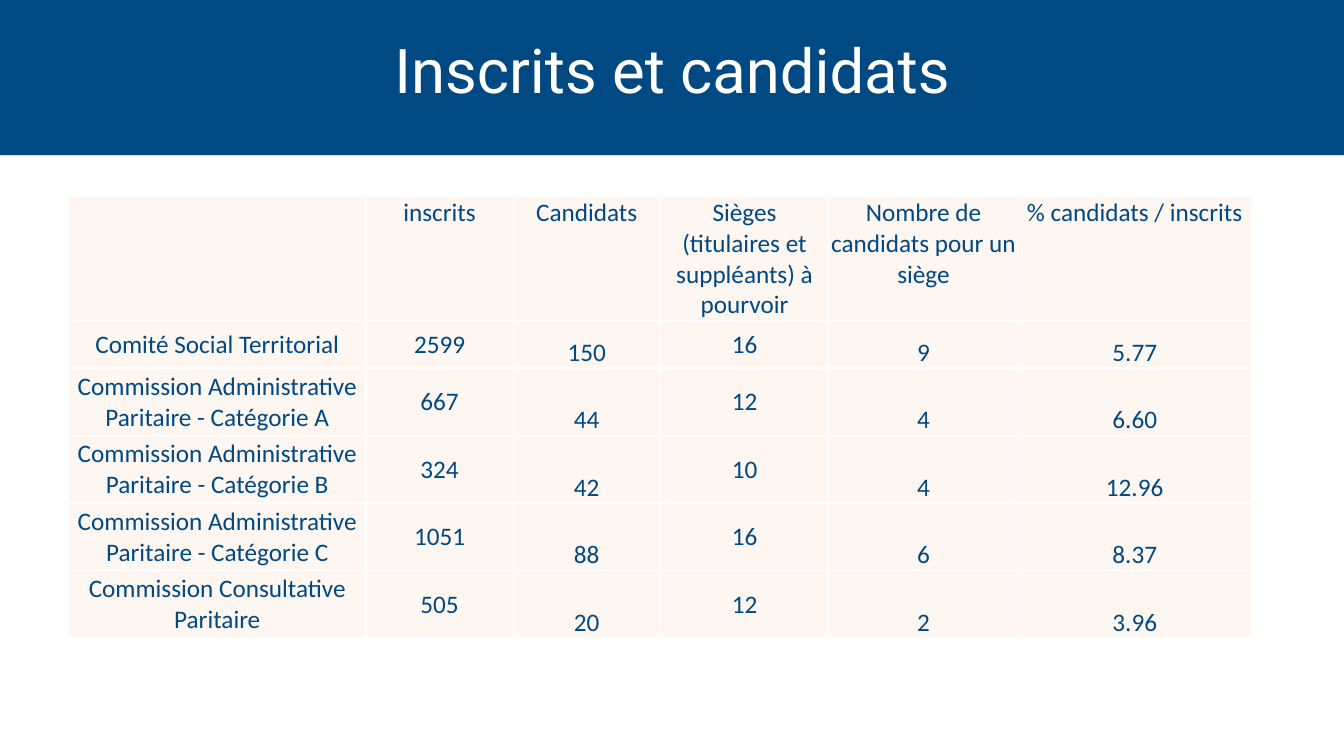
from lxml import etree
from pptx import Presentation
from pptx.dml.color import RGBColor
from pptx.enum.shapes import MSO_SHAPE
from pptx.enum.text import MSO_ANCHOR, PP_ALIGN
from pptx.oxml.ns import qn
from pptx.util import Inches, Pt

RECTANGLE = MSO_SHAPE.RECTANGLE
CENTER = PP_ALIGN.CENTER
TOP, MIDDLE, BOTTOM = MSO_ANCHOR.TOP, MSO_ANCHOR.MIDDLE, MSO_ANCHOR.BOTTOM
TITLE_ONLY = 5

BLUE, WHITE, CREAM = "004982", "FFFFFF", "FDF6F1"

COLUMN_WIDTHS = [2.95, 1.46, 1.46, 1.67, 1.88, 2.31]
ROW_HEIGHTS = [1.22, 0.47] + [0.67] * 4
COLUMN_ANCHORS = [MIDDLE, MIDDLE, BOTTOM, MIDDLE, BOTTOM, BOTTOM]
ELECTIONS = [
    ["", "inscrits", "Candidats", "Sièges (titulaires et suppléants) à pourvoir",
     "Nombre de candidats pour un siège", "% candidats / inscrits"],
    ["Comité Social Territorial", "2599", "150", "16", "9", "5.77"],
    ["Commission Administrative Paritaire - Catégorie A", "667", "44", "12", "4", "6.60"],
    ["Commission Administrative Paritaire - Catégorie B", "324", "42", "10", "4", "12.96"],
    ["Commission Administrative Paritaire - Catégorie C", "1051", "88", "16", "6", "8.37"],
    ["Commission Consultative Paritaire", "505", "20", "12", "2", "3.96"],
]


def rgb(value):
    return RGBColor.from_string(value)


def write(frame, text, font, size, color, align=CENTER, line_spacing=None):
    frame.word_wrap = True
    paragraph = frame.paragraphs[0]
    paragraph.alignment = align
    if line_spacing:
        paragraph.line_spacing = line_spacing
    paragraph.font.size = Pt(size)
    if text:
        run = paragraph.add_run()
        run.text = text
        run.font.name = font
        run.font.size = Pt(size)
        run.font.color.rgb = rgb(color)


def outline_cell(cell, color, width):
    """Draw the four borders, which must precede the fill in the cell properties."""
    properties = cell._tc.get_or_add_tcPr()
    for position, side in enumerate(("lnL", "lnR", "lnT", "lnB")):
        border = etree.Element(qn(f"a:{side}"), w=str(Pt(width)))
        fill = etree.SubElement(border, qn("a:solidFill"))
        etree.SubElement(fill, qn("a:srgbClr"), val=color)
        properties.insert(position, border)


class ResultsSlide:
    heading_font = "Roboto"
    table_font = "Calibri"

    def __init__(self, presentation):
        self.slide = presentation.slides.add_slide(presentation.slide_layouts[TITLE_ONLY])

    def title(self, text, left, top, width, height):
        title = self.slide.shapes.title
        title.left, title.top = Inches(left), Inches(top)
        title.width, title.height = Inches(width), Inches(height)
        title.text_frame.vertical_anchor = MIDDLE
        write(title.text_frame, text, self.heading_font, 44, WHITE, line_spacing=0.9)

    def band(self, left, top, width, height):
        """Add the coloured band behind the title."""
        band = self.slide.shapes.add_shape(
            RECTANGLE, Inches(left), Inches(top), Inches(width), Inches(height))
        band.shadow.inherit = False
        band.fill.solid()
        band.fill.fore_color.rgb = rgb(BLUE)
        band.line.fill.background()
        self.slide.shapes.title.element.addprevious(band.element)

    def table(self, rows, left, top, widths, heights, anchors):
        table = self.slide.shapes.add_table(
            len(rows), len(widths), Inches(left), Inches(top),
            Inches(sum(widths)), Inches(sum(heights))).table
        table.horz_banding = False
        for column, width in zip(table.columns, widths):
            column.width = Inches(width)
        for row_index, (row, height) in enumerate(zip(rows, heights)):
            table.rows[row_index].height = Inches(height)
            for column_index, text in enumerate(row):
                anchor = anchors[column_index] if row_index else TOP
                self.cell(table.cell(row_index, column_index), text, anchor)

    def cell(self, cell, text, anchor):
        cell.margin_left = cell.margin_right = cell.margin_top = Inches(0.01)
        cell.margin_bottom = 0
        cell.vertical_anchor = anchor
        cell.fill.solid()
        cell.fill.fore_color.rgb = rgb(CREAM)
        outline_cell(cell, WHITE, 1)
        write(cell.text_frame, text, self.table_font, 18, BLUE)


def main():
    presentation = Presentation()
    presentation.slide_width, presentation.slide_height = Inches(13.33), Inches(7.5)
    results = ResultsSlide(presentation)
    results.band(-0.08, 0, 13.41, 1.54)
    results.title("Inscrits et candidats", 0.92, 0, 11.5, 1.45)
    results.table(ELECTIONS, 0.68, 1.95, COLUMN_WIDTHS, ROW_HEIGHTS, COLUMN_ANCHORS)
    presentation.save("out.pptx")


if __name__ == "__main__":
    main()
